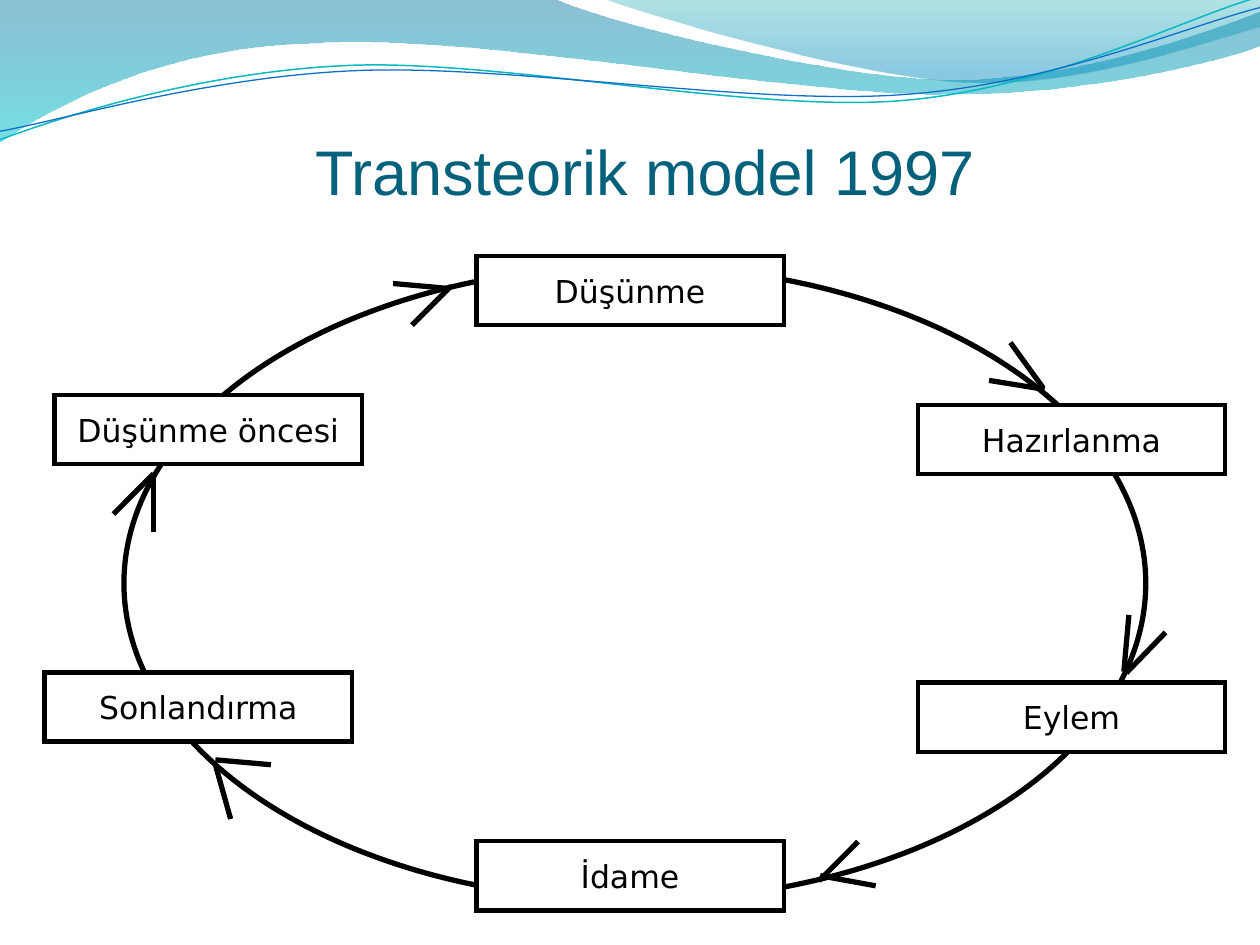
from lxml import etree
from pptx import Presentation
from pptx.dml.color import RGBColor
from pptx.enum.shapes import MSO_CONNECTOR, MSO_SHAPE
from pptx.enum.text import MSO_ANCHOR, PP_ALIGN
from pptx.oxml.ns import qn
from pptx.util import Pt

STRAIGHT = MSO_CONNECTOR.STRAIGHT
RECTANGLE, OVAL = MSO_SHAPE.RECTANGLE, MSO_SHAPE.OVAL
MIDDLE, BOTTOM = MSO_ANCHOR.MIDDLE, MSO_ANCHOR.BOTTOM
CENTER = PP_ALIGN.CENTER
BLACK, WHITE = "000000", "FFFFFF"
WAVE_TILT = 357.3
BOX_WIDTH, BOX_HEIGHT = 175.7, 39.6

WIDE_BAND = [
    [(0, 0)],
    [(316.8, -0.7)],
    [(342.7, 12.2), (478.1, 45.4), (545.8, 45.4)],
    [(614.2, 45.4), (689.8, 18.7), (720, 6.5)],
    [(720.7, 25.9)],
    [(707.8, 31.7), (626.4, 54.7), (537.1, 54)],
    [(447.8, 54), (275, 20.2), (185, 24.5)],
    [(92.9, 25.9), (33.1, 59.8), (-0.7, 81.4)],
    [(0, 0)],
]
RIGHT_BAND = [
    [(344.9, -0.7)],
    [(366.5, 7.9), (491, 44.6), (553.7, 46.8)],
    [(616.3, 49.7), (691.9, 23), (720, 15.1)],
    [(720, 0)],
    [(344.9, -0.7)],
]
TEAL_WAVE = [
    [(-1.4, 62.9)],
    [(33.8, 51.7), (114.1, 29.4), (199.8, 29.9)],
    [(284.9, 30.3), (425.8, 67.3), (512.4, 64.9)],
    [(599, 62.4), (676.4, 25.7), (720.2, 15.5)],
]
BLUE_WAVE = [
    [(-1.1, 58)],
    [(32.9, 53.8), (118.3, 32.5), (204.1, 33)],
    [(290.6, 33.4), (428.9, 63.8), (515.5, 61.4)],
    [(601.3, 59.6), (678.4, 30.1), (721.4, 21.3)],
]
STAGES = [
    ("Düşünme öncesi", 31.2, 225.7),
    ("Düşünme", 272.2, 146.3),
    ("Hazırlanma", 524.5, 231.4),
    ("Sonlandırma", 25.5, 384.2),
    ("İdame", 272.2, 480.7),
    ("Eylem", 524.5, 390),
]
ARROW_BARBS = [
    ((64.8, 293.8), (87.8, 270.7)),
    ((235.4, 185.8), (257.8, 163.4)),
    ((642.2, 383.8), (645.1, 351.4)),
    ((468, 503.3), (490.3, 481)),
    ((643.7, 384.5), (666, 361.4)),
    ((596.2, 221.8), (577.4, 195.8)),
    ((87.8, 303.8), (87.8, 272.2)),
    ((131.8, 468), (123.1, 437)),
    ((123.1, 434.2), (154.8, 437)),
    ((224.6, 162), (257, 164.9)),
    ((596.9, 222.5), (565.2, 217.4)),
    ((468.7, 500.4), (500.4, 506.2)),
]


def rgb(color):
    """Turn a hex string into a colour."""
    return RGBColor.from_string(color)


def set_line(line, color, width):
    """Give a line its colour and width."""
    line.color.rgb = rgb(color)
    line.width = Pt(width)


def add_outline(slide, segments, close):
    """Add a freeform of straight and cubic Bézier segments."""
    start, *rest = [(Pt(x), Pt(y)) for segment in segments for x, y in segment]
    builder = slide.shapes.build_freeform(*start)
    builder.add_line_segments(rest, close=close)
    outline = builder.convert_to_shape()
    outline.shadow.inherit = False
    strokes = iter(list(outline.element.spPr.iter(qn("a:lnTo"))))
    for segment in segments[1:]:
        first, *others = [next(strokes) for _ in segment]
        if others:
            first.tag = qn("a:cubicBezTo")
        for other in others:
            first.append(other[0])
            other.getparent().remove(other)
    return outline


def add_band(slide, segments, stops):
    """Add a band with a translucent gradient from top to bottom."""
    band = add_outline(slide, segments, True)
    band.line.fill.background()
    band.fill.gradient()
    band.fill.gradient_angle = 270
    for stop, (position, color, _) in zip(band.fill.gradient_stops, stops):
        stop.position = position
        stop.color.rgb = rgb(color)
    colors = band.element.spPr.find(qn("a:gradFill")).iter(qn("a:srgbClr"))
    for color, (_, _, opacity) in zip(colors, stops):
        etree.SubElement(color, qn("a:alpha"), val=str(opacity * 1000))


def add_wave(slide, segments, color, width):
    """Add an open, slightly tilted wave line."""
    wave = add_outline(slide, segments, False)
    wave.rotation = WAVE_TILT
    wave.fill.background()
    set_line(wave.line, color, width)


def set_text(frame, text, size, font, color):
    """Write one paragraph in one font."""
    frame.text = text
    paragraph = frame.paragraphs[0]
    paragraph.font.size = Pt(size)
    paragraph.font.name = font
    paragraph.font.color.rgb = rgb(color)
    return paragraph


def add_title(slide, text):
    """Add the slide title."""
    frame = slide.shapes.add_textbox(Pt(180), Pt(67.7), Pt(507.6), Pt(51.1)).text_frame
    frame.word_wrap = True
    frame.vertical_anchor = BOTTOM
    frame.margin_left = frame.margin_right = frame.margin_bottom = 0
    set_text(frame, text, 36, "Arial", "04617B")


def add_cycle(slide):
    """Add the ellipse that joins the stages."""
    cycle = slide.shapes.add_shape(OVAL, Pt(70.8), Pt(151.9), Pt(583.9), Pt(362.9))
    cycle.shadow.inherit = False
    cycle.fill.background()
    set_line(cycle.line, BLACK, 3)


def add_stage(slide, text, left, top):
    """Add the sharp-cornered box of one stage."""
    stage = slide.shapes.add_shape(RECTANGLE, Pt(left), Pt(top), Pt(BOX_WIDTH), Pt(BOX_HEIGHT))
    stage.shadow.inherit = False
    stage.fill.solid()
    stage.fill.fore_color.rgb = rgb(WHITE)
    set_line(stage.line, BLACK, 2.5)
    etree.SubElement(stage.element.spPr.find(qn("a:ln")), qn("a:miter"), lim="800000")
    frame = stage.text_frame
    frame.word_wrap = False
    frame.vertical_anchor = MIDDLE
    set_text(frame, text, 18, "DejaVu Sans", BLACK).alignment = CENTER


def add_barb(slide, start, end):
    """Add one stroke of an arrow on the cycle."""
    barb = slide.shapes.add_connector(STRAIGHT, *map(Pt, start + end))
    set_line(barb.line, BLACK, 3)
    etree.SubElement(barb.element.spPr, qn("a:effectLst"))


def main():
    """Build the slide and save it."""
    deck = Presentation()
    deck.slide_width, deck.slide_height = Pt(720), Pt(540)
    slide = deck.slides.add_slide(deck.slide_layouts[6])
    add_band(slide, WIDE_BAND, [(0, "0074A1", 45), (1, "00C6CF", 55)])
    add_band(slide, RIGHT_BAND, [(0, "00A1A9", 30), (0.8, "008BBF", 45)])
    add_wave(slide, TEAL_WAVE, "0AB8BF", 0.85)
    add_wave(slide, BLUE_WAVE, "0F6FC6", 0.75)
    add_title(slide, "Transteorik model 1997")
    add_cycle(slide)
    for text, left, top in STAGES:
        add_stage(slide, text, left, top)
    for start, end in ARROW_BARBS:
        add_barb(slide, start, end)
    deck.save("out.pptx")


if __name__ == "__main__":
    main()
